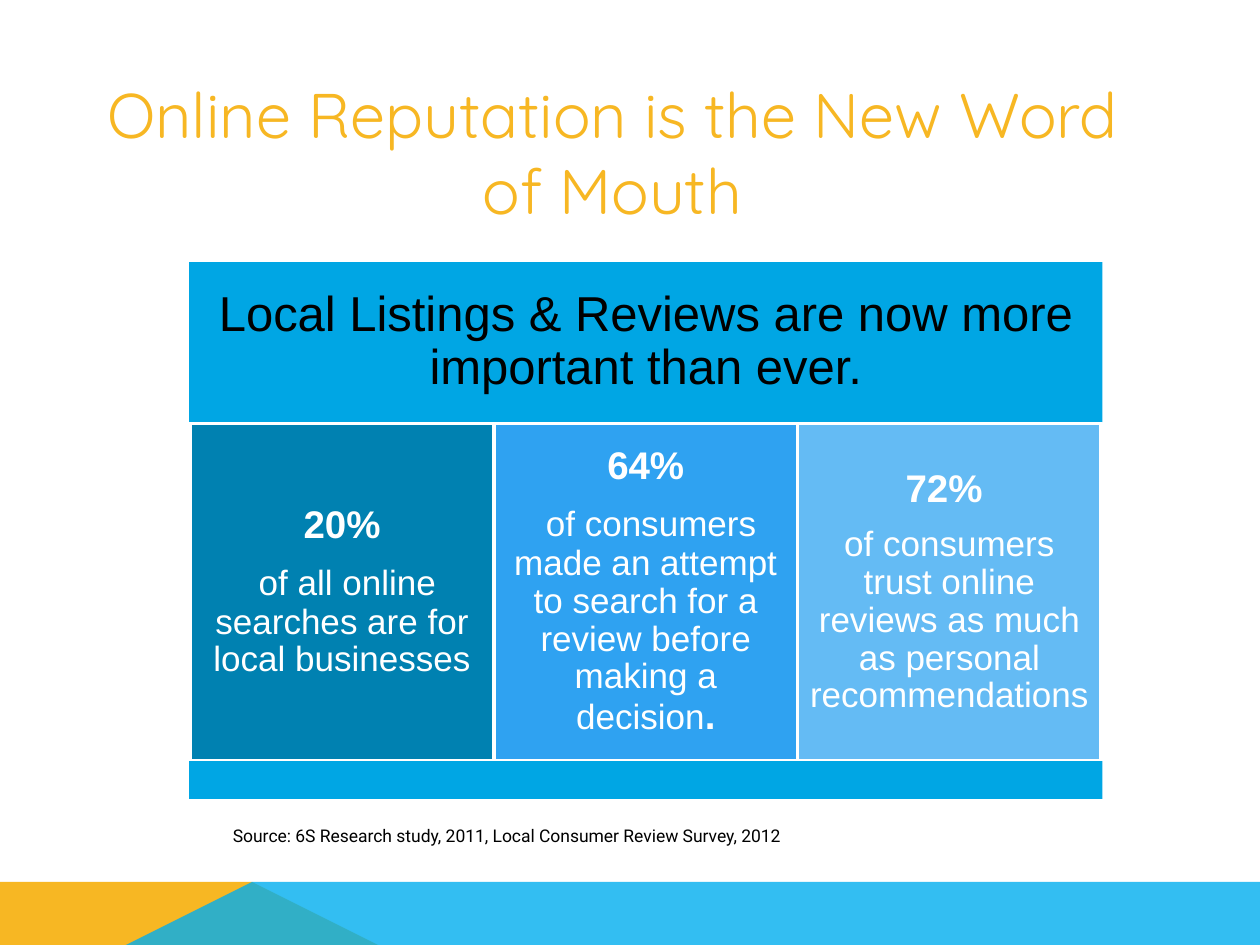
from lxml import etree
from pptx import Presentation, util as u
from pptx.dml.color import RGBColor
from pptx.enum import shapes, text
from pptx.oxml.ns import qn

# Content: each paragraph is a list of (text, style name) runs
TITLE = [[("Online Reputation is the New Word of Mouth", "title")]]
BANNER = [[("Local Listings & Reviews are now more important than ever.", "banner")]]
STATISTICS = [
    [[("20%", "figure")],
     [(" ", "figure"), ("of all online searches are for local businesses", "body")]],
    [[("64%", "figure")],
     [(" ", "figure"),
      ("of consumers made an attempt to search for a review before making a decision", "body"),
      (".", "figure")]],
    [[("72% ", "figure")],
     [("of consumers trust online reviews as much as personal recommendations", "body")]],
]
SOURCE = [[("Source: 6S Research study, 2011, Local Consumer Review Survey, 2012", "source")]]

THEME = {
    "gold": "F7B723", "sky": "00AEEF", "panel": "00A6E4", "white": "FFFFFF",
    "columns": ["0081B1", "2FA2F1", "64BBF4"],
    # font, size, colour, bold
    "title": ("Quicksand", 36, "F7B723", False),
    "banner": ("Arial", 28, "000000", False),
    "figure": ("Arial", 22, "FFFFFF", True),
    "body": ("Arial", 20, "FFFFFF", False),
    "source": ("Roboto", 10, "000000", False),
}

# Layout in inches
WIDTH, HEIGHT = 10, 7.5
FOOTER_TOP = HEIGHT * 0.9
PEAK = 2.23
PANEL_LEFT, PANEL_WIDTH = 1.5, 7.25
BANNER_TOP, COLUMN_TOP, BASE_TOP, PANEL_BOTTOM = 2.08, 3.36, 6.04, 6.34
COLUMN_MARGIN = 0.01
COLUMN_WIDTH = (PANEL_WIDTH - 2 * COLUMN_MARGIN) / len(STATISTICS)

presentation = Presentation()
presentation.slide_width, presentation.slide_height = u.Inches(WIDTH), u.Inches(HEIGHT)
slide = presentation.slides.add_slide(presentation.slide_layouts[6])


def paint(shape, fill, line=None, opacity=None):
    shape.shadow.inherit = False
    shape.fill.solid()
    shape.fill.fore_color.rgb = RGBColor.from_string(fill)
    if opacity is not None:
        color = shape.fill._xPr.find(qn("a:solidFill"))[0]
        etree.SubElement(color, qn("a:alpha")).set("val", str(opacity * 1000))
    if line:
        shape.line.color.rgb = RGBColor.from_string(line)
        shape.line.width = u.Pt(2)
    else:
        shape.line.fill.background()


def add_polygon(points, fill, opacity=None):
    builder = slide.shapes.build_freeform(*points[0], scale=u.Inches(1))
    builder.add_line_segments(points[1:], close=True)
    paint(builder.convert_to_shape(), fill, opacity=opacity)


def add_panel(left, top, width, height, fill, line=None):
    shape = slide.shapes.add_shape(
        shapes.MSO_SHAPE.RECTANGLE, *map(u.Inches, (left, top, width, height)))
    paint(shape, fill, line)
    return shape


def add_text_box(left, top, width, height):
    return slide.shapes.add_textbox(*map(u.Inches, (left, top, width, height)))


def write(shape, paragraphs, align=text.PP_ALIGN.CENTER, anchor=text.MSO_ANCHOR.MIDDLE,
          spacing=None, gap=0, inset=None):
    frame = shape.text_frame
    frame.word_wrap = True
    frame.vertical_anchor = anchor
    if inset is not None:
        frame.margin_left = frame.margin_right = u.Inches(inset)
        frame.margin_top = frame.margin_bottom = u.Inches(inset)
    for index, runs in enumerate(paragraphs):
        paragraph = frame.add_paragraph() if index else frame.paragraphs[0]
        paragraph.alignment = align
        if spacing:
            paragraph.line_spacing = spacing
        if index:
            paragraph.space_before = u.Pt(gap)
        for words, style in runs:
            run = paragraph.add_run()
            run.text = words
            font, size, color, bold = THEME[style]
            run.font.name, run.font.size, run.font.bold = font, u.Pt(size), bold
            run.font.color.rgb = RGBColor.from_string(color)


# Footer bands
add_polygon([(0, HEIGHT), (0, FOOTER_TOP), (PEAK, FOOTER_TOP), (3.91, HEIGHT)], THEME["gold"])
add_polygon([(0, HEIGHT), (PEAK, FOOTER_TOP), (WIDTH, FOOTER_TOP), (WIDTH, HEIGHT)],
            THEME["sky"], opacity=80)

# Title
write(add_text_box(0.75, 0.9, 8.22, 0.6), TITLE)

# Banner
banner = add_panel(PANEL_LEFT, BANNER_TOP, PANEL_WIDTH, 1.27, THEME["panel"])
write(banner, BANNER, spacing=0.9, inset=0.12)

# Statistic columns
for index, (paragraphs, fill) in enumerate(zip(STATISTICS, THEME["columns"])):
    column = add_panel(PANEL_LEFT + COLUMN_MARGIN + index * COLUMN_WIDTH, COLUMN_TOP,
                       COLUMN_WIDTH, BASE_TOP - COLUMN_TOP, fill, THEME["white"])
    write(column, paragraphs, spacing=0.9, gap=9, inset=0.09)

# Base strip and source
add_panel(PANEL_LEFT, BASE_TOP, PANEL_WIDTH, PANEL_BOTTOM - BASE_TOP, THEME["panel"])
write(add_text_box(1.75, 6.5, 6, 0.27), SOURCE,
      align=text.PP_ALIGN.LEFT, anchor=text.MSO_ANCHOR.TOP)

presentation.save("out.pptx")
